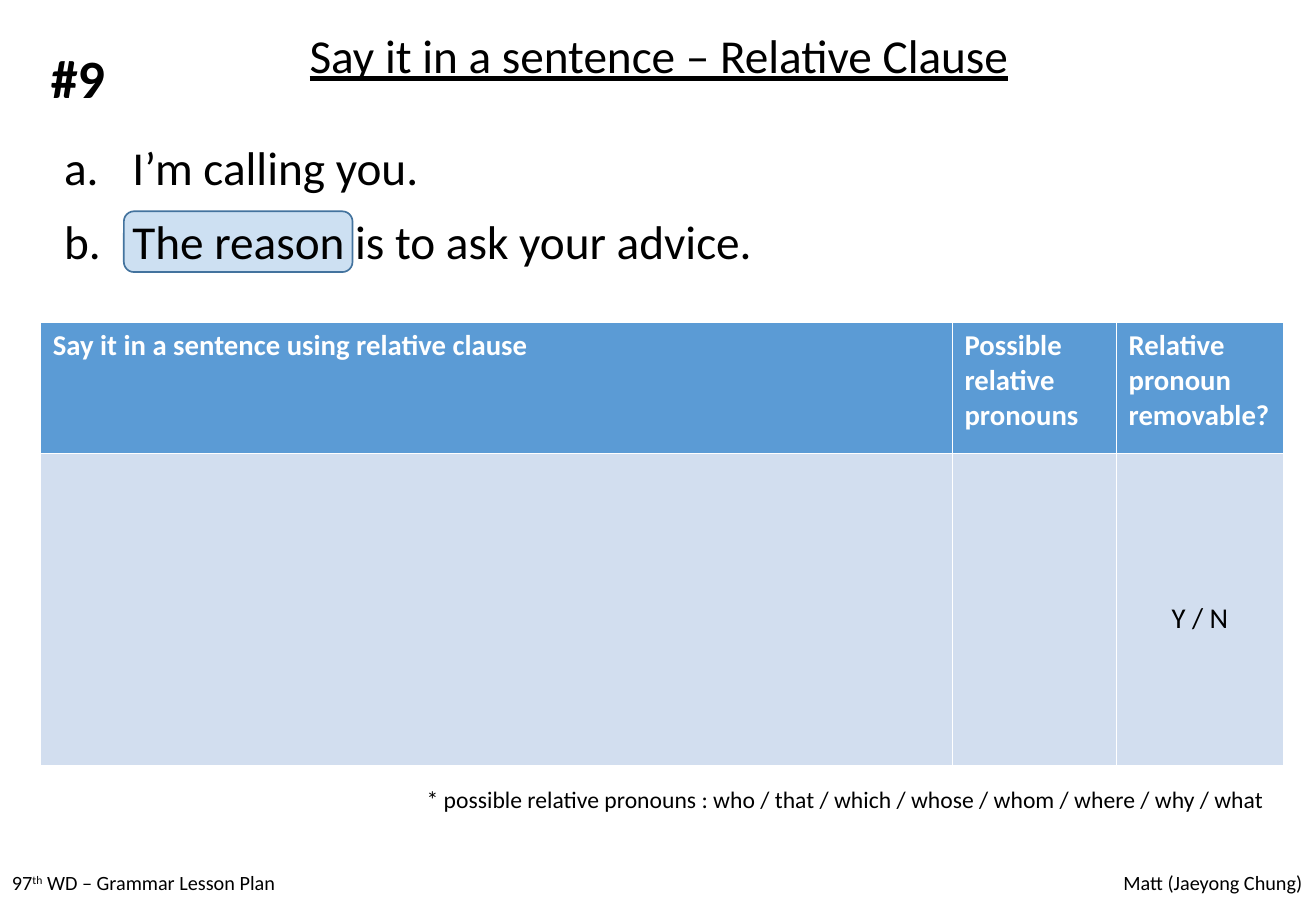
from lxml import etree
from pptx import Presentation
from pptx.dml.color import RGBColor
from pptx.enum.shapes import MSO_SHAPE
from pptx.enum.text import MSO_ANCHOR, PP_ALIGN
from pptx.oxml.ns import qn
from pptx.util import Cm, Pt

LEFT, CENTER, RIGHT = PP_ALIGN.LEFT, PP_ALIGN.CENTER, PP_ALIGN.RIGHT
TOP, MIDDLE = MSO_ANCHOR.TOP, MSO_ANCHOR.MIDDLE
ROUNDED = MSO_SHAPE.ROUNDED_RECTANGLE
COLORS = {"text": "000000", "white": "FFFFFF", "blue": "5B9BD5",
          "outline": "43739E", "pale": "D2DEEF"}


def color(name):
    return RGBColor.from_string(COLORS[name])


class LessonSlide:
    """Holds the lesson style and the slide being filled."""

    def __init__(self, deck, font="Calibri"):
        self.slide = deck.slides.add_slide(deck.slide_layouts[6])
        self.font = font

    def style(self, paragraph, size, align=LEFT, bold=False, underline=False,
              ink="text", spacing=None):
        paragraph.alignment = align
        if spacing:
            paragraph.line_spacing = spacing
        font = paragraph.font
        font.name, font.size, font.bold = self.font, Pt(size), bold
        font.underline = underline
        font.color.rgb = color(ink)

    def text(self, box, runs, size, anchor=TOP, **style):
        frame = self.slide.shapes.add_textbox(*map(Cm, box)).text_frame
        frame.word_wrap = True
        frame.vertical_anchor = anchor
        paragraph = frame.paragraphs[0]
        for words, raised in runs:
            run = paragraph.add_run()
            run.text = words
            if raised:
                run._r.get_or_add_rPr().set("baseline", "30000")
        self.style(paragraph, size, **style)

    def lettered_list(self, box, sentences, size):
        frame = self.slide.shapes.add_textbox(*map(Cm, box)).text_frame
        frame.word_wrap = True
        frame.text = "\n".join(sentences)
        for paragraph in frame.paragraphs:
            paragraph.space_before = Pt(10)
            properties = paragraph._p.get_or_add_pPr()
            properties.set("marL", str(Cm(1.43)))
            properties.set("indent", str(Cm(-1.43)))
            numbering = etree.SubElement(properties, qn("a:buAutoNum"))
            numbering.set("type", "alphaLcPeriod")
            self.style(paragraph, size)

    def highlight(self, box, opacity):
        marker = self.slide.shapes.add_shape(ROUNDED, *map(Cm, box))
        marker.shadow.inherit = False
        marker.fill.solid()
        marker.fill.fore_color.rgb = color("blue")
        fill_color = marker.fill._xPr.find(qn("a:solidFill"))[0]
        etree.SubElement(fill_color, qn("a:alpha")).set("val", str(opacity * 1000))
        marker.line.color.rgb = color("outline")
        marker.line.width = Pt(1)

    def table(self, left, top, widths, heights, rows, size):
        grid = self.slide.shapes.add_table(
            len(heights), len(widths), Cm(left), Cm(top),
            Cm(sum(widths)), Cm(sum(heights))).table
        for column, width in zip(grid.columns, widths):
            column.width = Cm(width)
        for r, (row, height) in enumerate(zip(rows, heights)):
            grid.rows[r].height = Cm(height)
            header = r == 0
            for c, words in enumerate(row):
                cell = grid.cell(r, c)
                cell.text = words
                cell.vertical_anchor = TOP if header else MIDDLE
                cell.fill.solid()
                cell.fill.fore_color.rgb = color("blue" if header else "pale")
                self.style(cell.text_frame.paragraphs[0], size,
                           align=LEFT if header else CENTER, bold=header,
                           ink="white" if header else "text",
                           spacing=None if header else 1.5)


def main():
    deck = Presentation()
    deck.slide_width, deck.slide_height = Cm(27.51), Cm(19.05)
    lesson = LessonSlide(deck)

    lesson.highlight((2.59, 4.42, 4.78, 1.27), opacity=30)
    lesson.text((0, 18.08, 6.07, 0.81),
                [("97", False), ("th", True), (" WD – Grammar Lesson Plan", False)],
                12, anchor=MIDDLE, spacing=0.9)
    lesson.text((0.46, 0.56, 26.62, 1.57),
                [("Say it in a sentence – Relative Clause", False)],
                28, align=CENTER, underline=True, spacing=0.9)
    lesson.text((21.41, 18.08, 6.07, 0.81), [("Matt (Jaeyong Chung)", False)],
                12, anchor=MIDDLE, align=RIGHT, spacing=0.9)
    lesson.lettered_list((1.09, 2.77, 25.12, 3),
                         ["I’m calling you.", "The reason is to ask your advice."], 28)
    lesson.table(0.85, 6.73, [19.06, 3.43, 3.49], [2.75, 6.54],
                 [["Say it in a sentence using relative clause",
                   "Possible relative pronouns", "Relative pronoun removable?"],
                  ["", "", "Y / N"]], 17)
    lesson.text((0.91, 16.28, 25.88, 0.86),
                [("* possible relative pronouns : who / that / which / whose / "
                  "whom / where / why / what ", False)], 14, align=RIGHT)
    lesson.text((0.74, 0.81, 1.78, 1.63), [("#9", False)], 32,
                align=CENTER, bold=True)
    deck.save("out.pptx")


if __name__ == "__main__":
    main()
